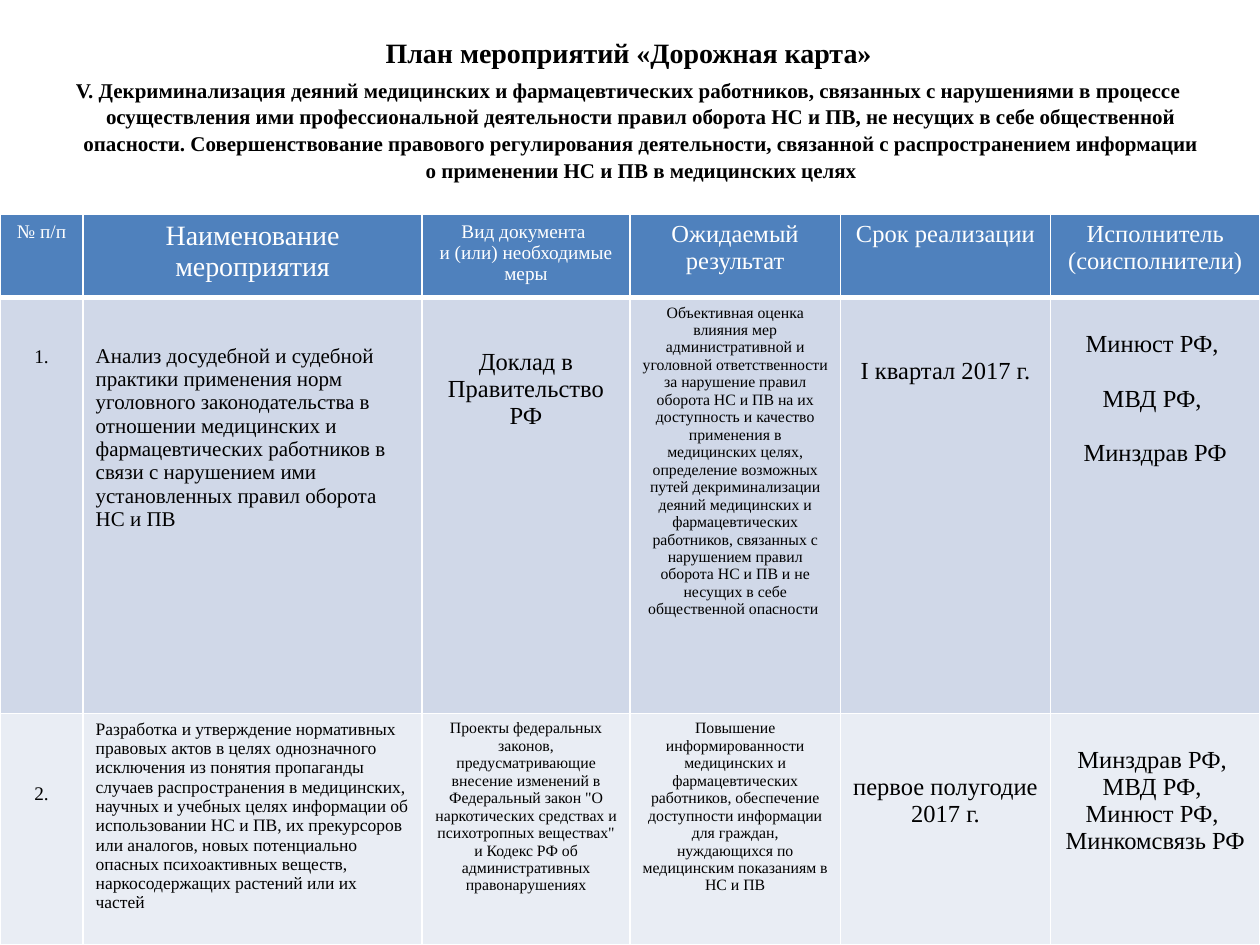
"""Build the road map slide: a heading, a section title and a table of planned measures."""
from dataclasses import dataclass

from lxml.etree import SubElement
from pptx import Presentation
from pptx.dml.color import RGBColor
from pptx.enum.text import MSO_ANCHOR as Anchor, MSO_AUTO_SIZE as AutoSize, PP_ALIGN as Align
from pptx.oxml import parse_xml
from pptx.oxml.ns import nsdecls, qn
from pptx.util import Inches, Pt

FONT = "Times New Roman"
COLORS = {"white": "FFFFFF", "black": "000000", "header": "4F81BD", "odd": "D0D8E8", "even": "E9EDF4"}
WIDTH, HEIGHT = Inches(10), Inches(7.5)
LINE = 1.107
COLUMNS = (0.066, 0.269, 0.165, 0.167, 0.167, 0.166)
ROWS = (0.088, 0.44, 0.245)
TABLE_TOP = 1 - sum(ROWS)
ROW_FILLS = ("header", "odd", "even")


@dataclass
class Entry:
    """Text of a cell, its size, the space above it and the gap between paragraphs, in points."""

    lines: tuple[str, ...]
    size: int
    above: float = 0
    gap: float = 0
    align: Align = Align.CENTER


@dataclass
class Heading:
    """Text of a placeholder with its size and its top and height as shares of the slide."""

    text: str
    size: int
    top: float
    height: float


HEADINGS = (
    Heading("План мероприятий «Дорожная карта»", 16, 0.028, 0.045),
    Heading(
        "V. Декриминализация деяний медицинских и фармацевтических работников, связанных с нарушениями "
        "в процессе осуществления ими профессиональной деятельности правил оборота НС и ПВ, не несущих "
        "в себе общественной опасности. Совершенствование правового регулирования деятельности, "
        "связанной с распространением информации о применении НС и ПВ в медицинских целях",
        12, 0.073, 0.134,
    ),
)

ENTRIES = (
    (
        Entry(("№ п/п",), 11),
        Entry(("Наименование мероприятия",), 16),
        Entry(("Вид документа ", "и (или) необходимые меры"), 11),
        Entry(("Ожидаемый результат",), 14),
        Entry(("Срок реализации",), 14),
        Entry(("Исполнитель (соисполнители)",), 14),
    ),
    (
        Entry(("1.",), 11, above=22 * LINE),
        Entry(
            (
                "Анализ досудебной и судебной практики применения норм уголовного законодательства "
                "в отношении медицинских и фармацевтических работников в связи с нарушением ими "
                "установленных правил оборота",
                "НС и ПВ",
            ),
            12, above=21 * LINE, align=Align.LEFT,
        ),
        Entry(("Доклад в Правительство РФ",), 14, above=23 * LINE),
        Entry(
            (
                "Объективная оценка влияния мер административной и уголовной ответственности за нарушение "
                "правил оборота НС и ПВ на их доступность и качество применения в медицинских целях, "
                "определение возможных путей декриминализации деяний медицинских и фармацевтических "
                "работников, связанных с нарушением правил оборота НС и ПВ и не несущих в себе "
                "общественной опасности ",
            ),
            9,
        ),
        Entry(("I квартал 2017 г.",), 14, above=28 * LINE),
        Entry(("Минюст РФ, ", "МВД РФ, ", "Минздрав РФ"), 14, above=14 * LINE, gap=14 * LINE),
    ),
    (
        Entry(("2.",), 11, above=33 * LINE),
        Entry(
            (
                "Разработка и утверждение нормативных правовых актов в целях однозначного исключения из "
                "понятия пропаганды случаев распространения в медицинских, научных и учебных целях "
                "информации об использовании НС и ПВ, их прекурсоров или аналогов, новых потенциально "
                "опасных психоактивных веществ, наркосодержащих растений или их частей",
            ),
            10, align=Align.LEFT,
        ),
        Entry(
            (
                "Проекты федеральных законов, предусматривающие внесение изменений в Федеральный закон "
                "\"О наркотических средствах и психотропных веществах\" и Кодекс РФ об административных "
                "правонарушениях",
            ),
            9,
        ),
        Entry(
            (
                "Повышение информированности медицинских и фармацевтических работников, обеспечение "
                "доступности информации для граждан, нуждающихся по медицинским показаниям в НС и ПВ",
            ),
            9,
        ),
        Entry(("первое полугодие 2017 г.",), 14, above=28 * LINE),
        Entry(("Минздрав РФ, ", "МВД РФ, ", "Минюст РФ, ", "Минкомсвязь РФ"), 14, above=14 * LINE),
    ),
)


def color(name: str) -> RGBColor:
    """Return a named colour."""
    return RGBColor.from_string(COLORS[name])


def apply(target, **values) -> None:
    """Set each given attribute on the target."""
    for name, value in values.items():
        setattr(target, name, value)


def write(paragraph, text: str, size: int, ink: str, bold: bool) -> None:
    """Add one formatted run to a paragraph."""
    run = paragraph.add_run()
    run.text = text
    apply(run.font, name=FONT, size=Pt(size), bold=bold)
    run.font.color.rgb = color(ink)


def fill_placeholder(shape, heading: Heading) -> None:
    """Place a heading in a placeholder with a hanging indent and no bullet."""
    apply(shape, left=int(WIDTH * 0.028), top=int(HEIGHT * heading.top),
          width=int(WIDTH * 0.937), height=int(HEIGHT * heading.height))
    shape.fill.solid()
    shape.fill.fore_color.rgb = color("white")
    apply(shape.text_frame, word_wrap=True, auto_size=AutoSize.NONE, vertical_anchor=Anchor.TOP)
    paragraph = shape.text_frame.paragraphs[0]
    apply(paragraph, alignment=Align.CENTER, line_spacing=1.07, space_before=Pt(0), space_after=Pt(3))
    properties = paragraph._p.get_or_add_pPr()
    properties.set("marL", str(Inches(0.25)))
    properties.set("indent", str(Inches(-0.2)))
    SubElement(properties, qn("a:buNone"))
    write(paragraph, heading.text, heading.size, "black", True)


def add_borders(cell, bottom: int) -> None:
    """Give a cell white borders one point wide, except for the bottom one."""
    properties = cell._tc.get_or_add_tcPr()
    for position, (side, points) in enumerate({"L": 1, "R": 1, "T": 1, "B": bottom}.items()):
        properties.insert(position, parse_xml(
            f'<a:ln{side} {nsdecls("a")} w="{Pt(points)}"><a:solidFill>'
            f'<a:srgbClr val="{COLORS["white"]}"/></a:solidFill></a:ln{side}>'))


def fill_cell(cell, entry: Entry, fill: str) -> None:
    """Write an entry into a table cell and colour it."""
    is_header = fill == "header"
    cell.fill.solid()
    cell.fill.fore_color.rgb = color(fill)
    add_borders(cell, 3 if is_header else 1)
    apply(cell, margin_top=Inches(0.05) + Pt(entry.above), vertical_anchor=Anchor.TOP)
    for index, line in enumerate(entry.lines):
        paragraph = cell.text_frame.add_paragraph() if index else cell.text_frame.paragraphs[0]
        apply(paragraph, alignment=entry.align, space_before=Pt(entry.gap if index else 0))
        write(paragraph, line, entry.size, "white" if is_header else "black", False)


def add_plan(slide) -> None:
    """Add the table of measures across the full width of the slide."""
    table = slide.shapes.add_table(len(ROWS), len(COLUMNS), 0, int(HEIGHT * TABLE_TOP),
                                   WIDTH, int(HEIGHT * sum(ROWS))).table
    for column, share in zip(table.columns, COLUMNS):
        column.width = int(WIDTH * share)
    for row, share, entries, fill in zip(table.rows, ROWS, ENTRIES, ROW_FILLS):
        row.height = int(HEIGHT * share)
        for cell, entry in zip(row.cells, entries):
            fill_cell(cell, entry, fill)


def main() -> None:
    """Build and save the presentation."""
    presentation = Presentation()
    apply(presentation, slide_width=WIDTH, slide_height=HEIGHT)
    slide = presentation.slides.add_slide(presentation.slide_layouts[1])
    for shape, heading in zip(slide.placeholders, HEADINGS):
        fill_placeholder(shape, heading)
    add_plan(slide)
    presentation.save("out.pptx")


if __name__ == "__main__":
    main()
